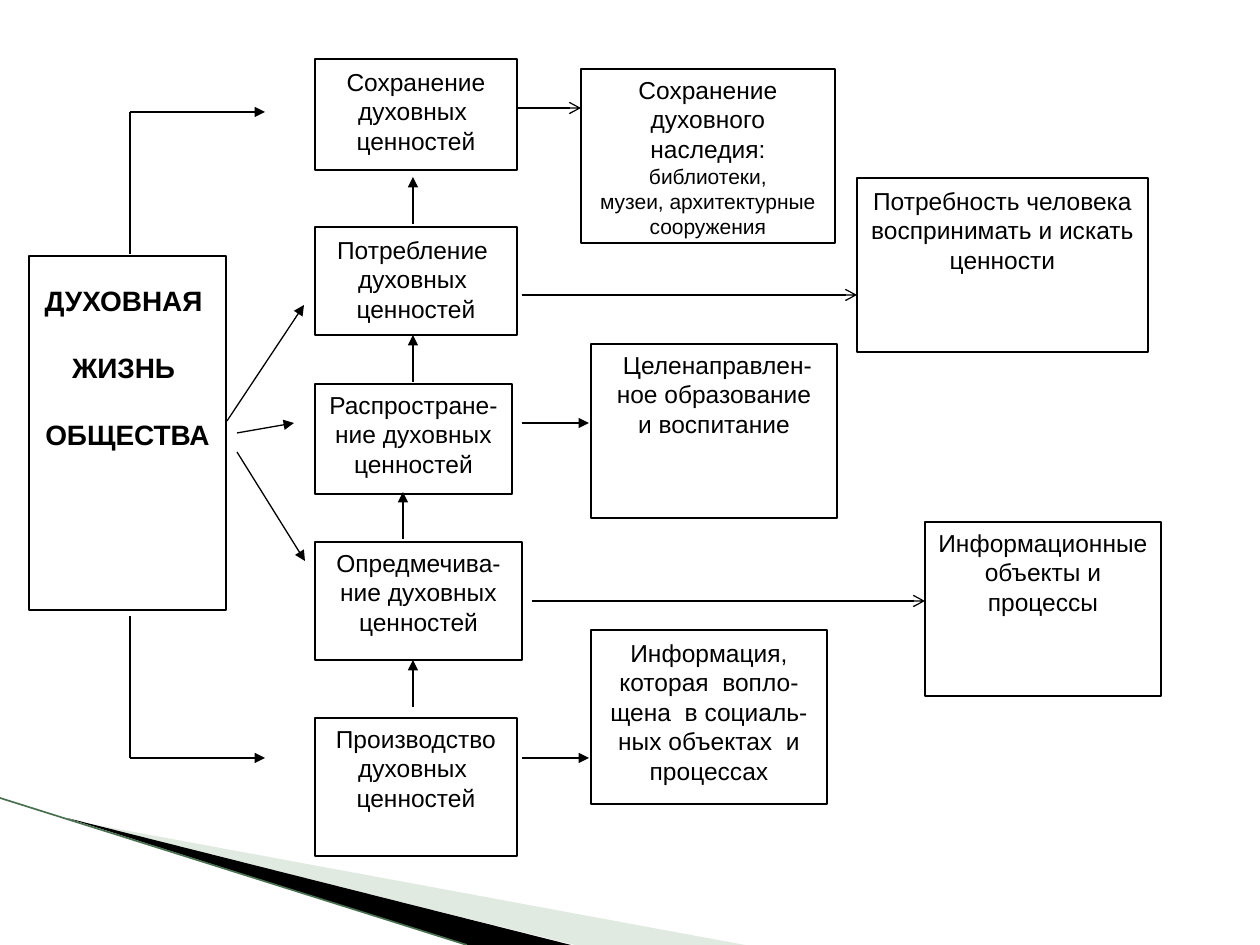
from lxml import etree
from pptx import Presentation
from pptx.dml.color import RGBColor
from pptx.enum.shapes import MSO_CONNECTOR as CONN, MSO_SHAPE as SHAPE
from pptx.enum.text import MSO_ANCHOR as ANCHOR, PP_ALIGN as ALIGN
from pptx.oxml.ns import qn
from pptx.util import Pt

PX = 914400 / 126
COLORS = {"ink": "000000", "paper": "FFFFFF", "pale": "B3CBB5", "edge": "497050"}


def rgb(name):
    return RGBColor.from_string(COLORS[name])


def add_line(start, end, head=None, color="ink", width=0.75):
    """Draw a straight line, with an arrowhead of the given type at its end."""
    c = s.shapes.add_connector(CONN.STRAIGHT, *[round(v * PX) for v in start + end])
    c.line.color.rgb = rgb(color)
    c.line.width = Pt(width)
    if head:
        etree.SubElement(c.line._get_or_add_ln(), qn("a:tailEnd"), type=head)
    etree.SubElement(c._element.spPr, qn("a:effectLst"))


prs = Presentation()
prs.slide_width, prs.slide_height = round(1260 * PX), round(945 * PX)
s = prs.slides.add_slide(prs.slide_layouts[6])

# Corner decoration
wedges = [
    ("pale", [(69, 820), (745, 945), (575, 945)]),
    ("ink", [(67, 818), (571, 945), (466, 945)]),
]
for color, points in wedges:
    builder = s.shapes.build_freeform(*points[0], scale=PX)
    builder.add_line_segments(points[1:])
    sp = builder.convert_to_shape()
    sp.shadow.inherit = False
    sp.fill.solid()
    sp.fill.fore_color.rgb = rgb(color)
    sp.line.fill.background()
    if color == "pale":
        fill = sp._element.spPr.find(qn("a:solidFill"))
        etree.SubElement(fill[0], qn("a:alpha"), val="40000")
add_line((0, 798), (467, 945), color="edge", width=0.95)

# Boxes: left, top, width, height, top inset, paragraphs
boxes = [
    (315, 59, 202, 111, 8, ["Сохранение", "духовных ", "ценностей"]),
    (315, 227, 202, 108, 8, ["Потребление ", "духовных ", "ценностей"]),
    (315, 384, 197, 110, 6, ["Распростране-ние духовных", "ценностей"]),
    (315, 542, 207, 118, 6, ["Опредмечива-ние духовных", "ценностей"]),
    (315, 718, 202, 138, 6, ["Производство духовных ", "ценностей"]),
    (581, 69, 254, 174, 6, ["Сохранение духовного", "наследия: |библиотеки,",
                            "|музеи, архитектурные", "|сооружения"]),
    (857, 178, 291, 174, 8, ["Потребность человека", "воспринимать и искать ценности"]),
    (591, 344, 246, 174, 6, [" Целенаправлен-ное образование", "и воспитание"]),
    (925, 522, 236, 174, 6, ["Информационные", "объекты и процессы"]),
    (591, 630, 236, 174, 8, ["Информация, которая  вопло-", "щена  в социаль-",
                             "ных объектах  и процессах"]),
    (29, 256, 197, 354, 28, ["ДУХОВНАЯ ", "ЖИЗНЬ ", "ОБЩЕСТВА"]),
]
for *frame, inset, lines in boxes:
    is_root = frame[0] == 29
    sp = s.shapes.add_shape(SHAPE.RECTANGLE, *[round(v * PX) for v in frame])
    sp.shadow.inherit = False
    sp.fill.solid()
    sp.fill.fore_color.rgb = rgb("paper")
    sp.line.color.rgb = rgb("ink")
    sp.line.width = Pt(0.75)
    tf = sp.text_frame
    tf.word_wrap = True
    tf.vertical_anchor = ANCHOR.TOP
    tf.margin_top = round(inset * PX)
    for i, line in enumerate(lines):
        p = tf.paragraphs[0] if i == 0 else tf.add_paragraph()
        p.alignment = ALIGN.CENTER
        if is_root and i:
            p.space_before = Pt(19)
        # Text after the bar is set smaller
        for part, size in zip(line.split("|"), (16 if is_root else 14, 12)):
            if part:
                r = p.add_run()
                r.text = part
                r.font.name = "Arial"
                r.font.size = Pt(size)
                r.font.bold = is_root
                r.font.color.rgb = rgb("ink")

# Elbows from the root box to the first and last stage
for y_root, y_stage in [(254, 112), (616, 758)]:
    add_line((130, y_root), (130, y_stage))
    add_line((130, y_stage), (265, y_stage), "triangle")

# Root to the middle stages
for start, end in [((227, 421), (304, 305)), ((237, 433), (294, 423)),
                   ((237, 452), (305, 561))]:
    add_line(start, end, "triangle")

# Stage to stage, upwards
for x, y in [(413, 224), (413, 382), (403, 539), (413, 707)]:
    add_line((x, y), (x, y - 47), "triangle")

# Stage to its explanation
for x1, x2, y, head in [(517, 581, 108, "arrow"), (522, 857, 295, "arrow"),
                        (522, 589, 423, "triangle"), (532, 925, 601, "arrow"),
                        (522, 589, 758, "triangle")]:
    add_line((x1, y), (x2, y), head)

prs.save("out.pptx")
